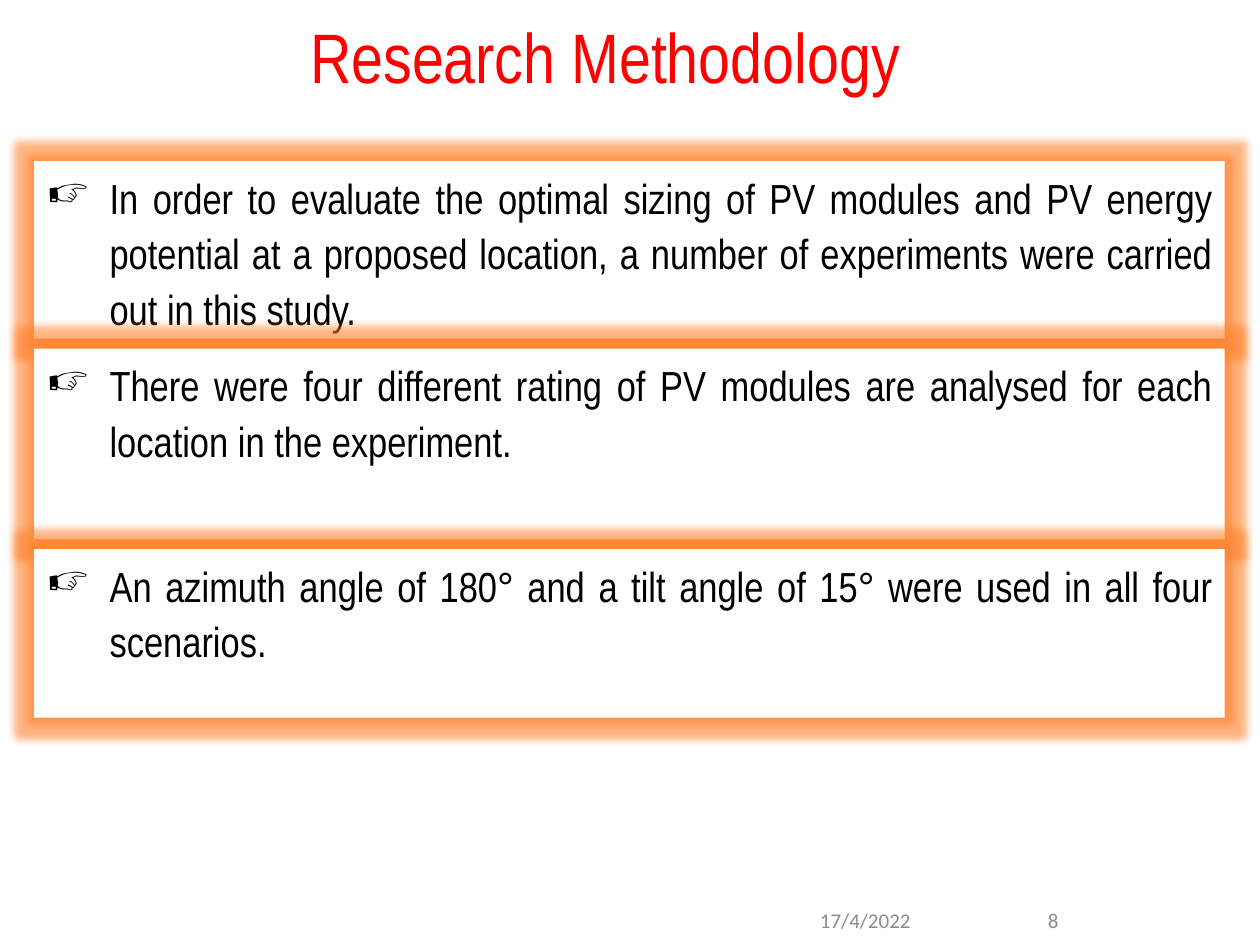
from lxml import etree
from pptx import Presentation
from pptx.dml.color import RGBColor
from pptx.enum.shapes import MSO_SHAPE
from pptx.enum.text import MSO_ANCHOR, PP_ALIGN
from pptx.oxml.ns import qn
from pptx.util import Cm, Pt

RECTANGLE = MSO_SHAPE.RECTANGLE
TOP, MIDDLE = MSO_ANCHOR.TOP, MSO_ANCHOR.MIDDLE
LEFT, CENTER, RIGHT, JUSTIFY = (
    PP_ALIGN.LEFT, PP_ALIGN.CENTER, PP_ALIGN.RIGHT, PP_ALIGN.JUSTIFY)

COLORS = {
    "title": "FF0000",
    "body": "000000",
    "footer": "8C8C8C",
    "panel": "FFFFFF",
    "glow": "FF832D",
}
TITLE_FONT = "Arial Narrow"
FOOTER_FONT = "Calibri"

# Text and panel height in cm
STEPS = [
    ("In order to evaluate the optimal sizing of PV modules and PV energy "
     "potential at a proposed location, a number of experiments were carried "
     "out in this study.", 3.58),
    ("There were four different rating of PV modules are analysed for each "
     "location in the experiment.", 3.84),
    ("An azimuth angle of 180° and a tilt angle of 15° were used in all four "
     "scenarios.", 3.4),
]
PANEL_LEFT, PANEL_TOP, PANEL_WIDTH, PANEL_GAP = 0.69, 3.25, 24, 0.2


def style_text(paragraph, font, size, color, align):
    paragraph.alignment = align
    for run in paragraph.runs:
        run.font.name = font
        run.font.size = Pt(size)
        run.font.color.rgb = RGBColor.from_string(COLORS[color])


def add_label(slide, text, box, font, size, color, align, anchor):
    frame = slide.shapes.add_textbox(*map(Cm, box)).text_frame
    frame.word_wrap = True
    frame.vertical_anchor = anchor
    frame.text = text
    style_text(frame.paragraphs[0], font, size, color, align)


def add_glow(shape):
    shape.shadow.inherit = False
    effects = shape._element.spPr.find(qn("a:effectLst"))
    glow = etree.SubElement(effects, qn("a:glow"), rad=str(Pt(8)))
    color = etree.SubElement(glow, qn("a:srgbClr"), val=COLORS["glow"])
    etree.SubElement(color, qn("a:alpha"), val="60000")


def add_bullet(paragraph, indent):
    properties = paragraph._p.get_or_add_pPr()
    properties.set("marL", str(indent))
    properties.set("indent", str(-indent))
    etree.SubElement(properties, qn("a:buChar"), char="☞")


def add_step_panel(slide, text, top, height):
    panel = slide.shapes.add_shape(
        RECTANGLE, Cm(PANEL_LEFT), Cm(top), Cm(PANEL_WIDTH), Cm(height))
    panel.fill.solid()
    panel.fill.fore_color.rgb = RGBColor.from_string(COLORS["panel"])
    panel.line.fill.background()
    add_glow(panel)

    frame = panel.text_frame
    frame.word_wrap = True
    frame.vertical_anchor = TOP
    frame.text = text
    step = frame.paragraphs[0]
    add_bullet(step, Cm(1.27))
    step.line_spacing = 1.1
    step.space_after = Pt(12)
    style_text(step, TITLE_FONT, 24, "body", JUSTIFY)


def main():
    deck = Presentation()
    deck.slide_width, deck.slide_height = Cm(25.4), Cm(19.05)
    slide = deck.slides.add_slide(deck.slide_layouts[6])

    # Title
    add_label(slide, "Research Methodology", (1.78, 0.15, 20.83, 2.41),
              TITLE_FONT, 40, "title", CENTER, TOP)

    # Date and slide number
    add_label(slide, "17/4/2022", (16.28, 18.06, 3.56, 0.99),
              FOOTER_FONT, 12, "footer", LEFT, MIDDLE)
    add_label(slide, "8", (20.04, 18.03, 1.55, 1.02),
              FOOTER_FONT, 12, "footer", RIGHT, MIDDLE)

    # Stacked method steps
    top = PANEL_TOP
    for text, height in STEPS:
        add_step_panel(slide, text, top, height)
        top += height + PANEL_GAP

    deck.save("out.pptx")


if __name__ == "__main__":
    main()
